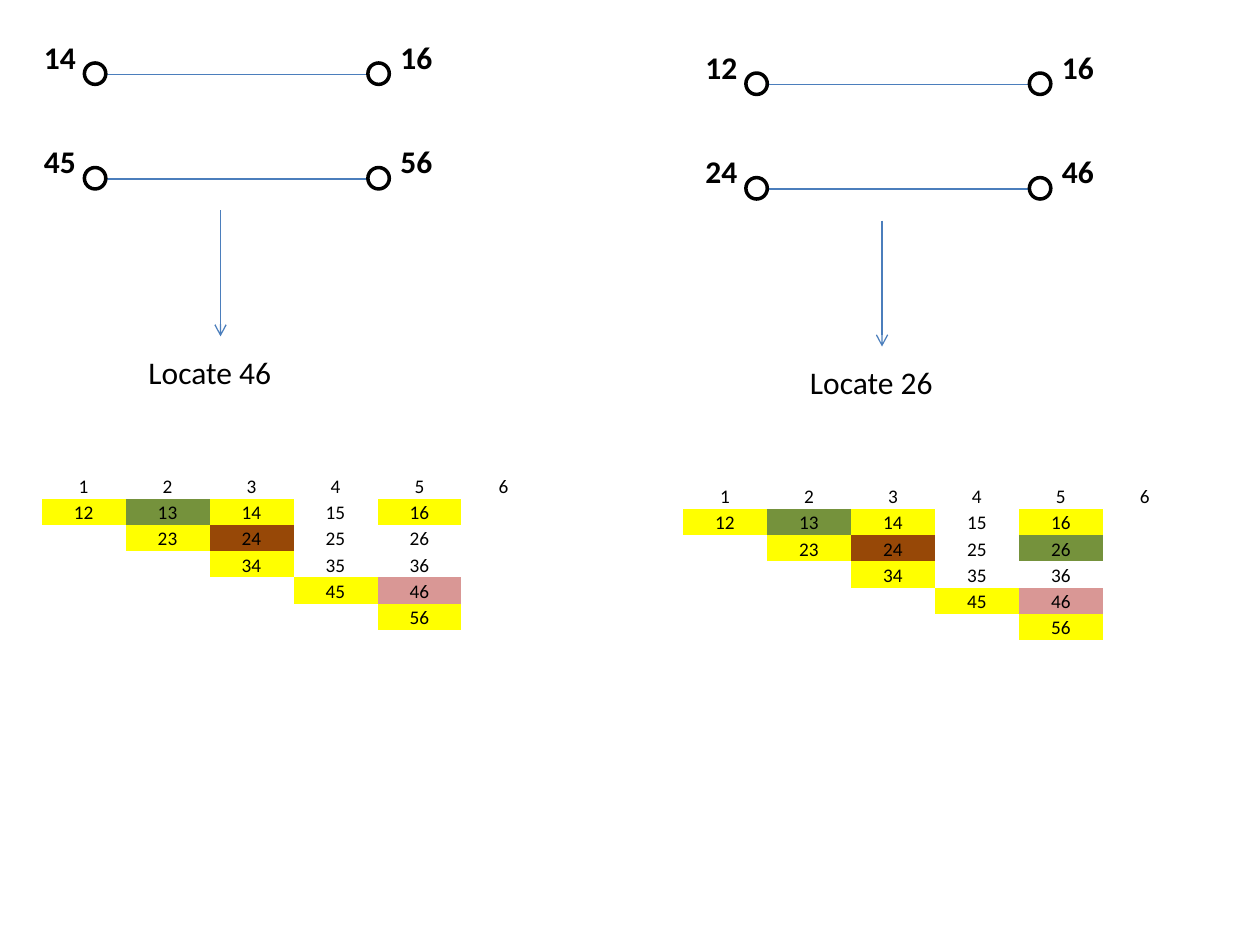
from lxml import etree
from pptx import Presentation
from pptx.dml.color import RGBColor
from pptx.enum.shapes import MSO_CONNECTOR, MSO_SHAPE
from pptx.enum.text import MSO_ANCHOR, MSO_AUTO_SIZE, PP_ALIGN
from pptx.oxml.ns import qn
from pptx.util import Inches, Pt

STRAIGHT = MSO_CONNECTOR.STRAIGHT
OVAL = MSO_SHAPE.OVAL
BOTTOM = MSO_ANCHOR.BOTTOM
FIT_SHAPE = MSO_AUTO_SIZE.SHAPE_TO_FIT_TEXT
CENTER = PP_ALIGN.CENTER

FONT = "Calibri"
NO_GRID_STYLE = "{2D5ABB26-0587-4C30-8999-92F81FD0307C}"
COLORS = {
    "text": "000000",
    "line": "4B7EBC",
    "yellow": "FFFF00",
    "green": "75923C",
    "brown": "974807",
    "pink": "D99795",
}
COLORS = {name: RGBColor.from_string(value) for name, value in COLORS.items()}

SIZE = 6
DOT = 0.17
BASE_FILLS = {
    "12": "yellow", "13": "green", "14": "yellow", "16": "yellow",
    "23": "yellow", "24": "brown", "34": "yellow",
    "45": "yellow", "46": "pink", "56": "yellow",
}

# Each example: left, top, table left, segment ends, located pair, fills
EXAMPLES = [
    (0.25, 0.25, 0.33, [("14", "16"), ("45", "56")], "46", BASE_FILLS),
    (5.5, 0.33, 5.42, [("12", "16"), ("24", "46")], "26",
     {**BASE_FILLS, "26": "green"}),
]

prs = Presentation()
prs.slide_width, prs.slide_height = Inches(10), Inches(7.5)
slide = prs.slides.add_slide(prs.slide_layouts[6])
shapes = slide.shapes


def add_line(x1, y1, x2, y2):
    line = shapes.add_connector(
        STRAIGHT, Inches(x1), Inches(y1), Inches(x2), Inches(y2))
    line.line.color.rgb = COLORS["line"]
    line.line.width = Pt(0.75)
    properties = line._element.spPr
    etree.SubElement(properties, qn("a:effectLst"))
    return line


def add_label(text, x, y, width, bold=False, wrap=False):
    frame = shapes.add_textbox(
        Inches(x), Inches(y), Inches(width), Inches(0.4)).text_frame
    frame.word_wrap = wrap
    frame.auto_size = FIT_SHAPE
    paragraph = frame.paragraphs[0]
    paragraph.text = text
    paragraph.font.name = FONT
    paragraph.font.size = Pt(18)
    paragraph.font.bold = bold
    paragraph.font.color.rgb = COLORS["text"]


for left, top, table_left, segments, located, fills in EXAMPLES:
    # Segments with a numbered dot at each end
    for index, ends in enumerate(segments):
        y = top + index * 0.83
        add_line(left + 0.58, y + 0.34, left + 2.67, y + 0.34)
        for end, dot_x, label_x in zip(ends, (0.42, 2.67), (0, 2.83)):
            dot = shapes.add_shape(
                OVAL, Inches(left + dot_x), Inches(y + 0.25),
                Inches(DOT), Inches(DOT))
            dot.shadow.inherit = False
            dot.fill.background()
            dot.line.color.rgb = COLORS["text"]
            dot.line.width = Pt(2)
            add_label(end, left + label_x, y, 0.46, bold=True)

    # Arrow down to the pair to locate
    arrow = add_line(left + 1.5, top + 1.42, left + 1.5, top + 2.42)
    etree.SubElement(arrow.line._get_or_add_ln(), qn("a:tailEnd"), type="arrow")
    add_label(f"Locate {located}", left + 0.83, top + 2.5, 1.42, wrap=True)

    # Upper triangle of pairs under a header of vertex numbers
    table = shapes.add_table(
        SIZE, SIZE, Inches(table_left), Inches(top + 3.5),
        Inches(4), Inches(1.25)).table
    table.first_row = table.horz_banding = False
    table._tbl.tblPr.find(qn("a:tableStyleId")).text = NO_GRID_STYLE
    for row in range(SIZE):
        for column in range(SIZE):
            if row == 0:
                value = str(column + 1)
            elif row <= column + 1 < SIZE:
                value = f"{row}{column + 2}"
            else:
                value = ""
            cell = table.cell(row, column)
            cell.vertical_anchor = BOTTOM
            cell.margin_left = cell.margin_right = cell.margin_top = Inches(0.01)
            cell.margin_bottom = 0
            if value in fills:
                cell.fill.solid()
                cell.fill.fore_color.rgb = COLORS[fills[value]]
            else:
                cell.fill.background()
            paragraph = cell.text_frame.paragraphs[0]
            paragraph.alignment = CENTER
            paragraph.font.name = FONT
            paragraph.font.size = Pt(11)
            paragraph.font.color.rgb = COLORS["text"]
            if value:
                paragraph.text = value
            else:  # keeps the empty cell from stretching its row
                etree.SubElement(paragraph._p, qn("a:endParaRPr"), sz="1100")

prs.save("out.pptx")
